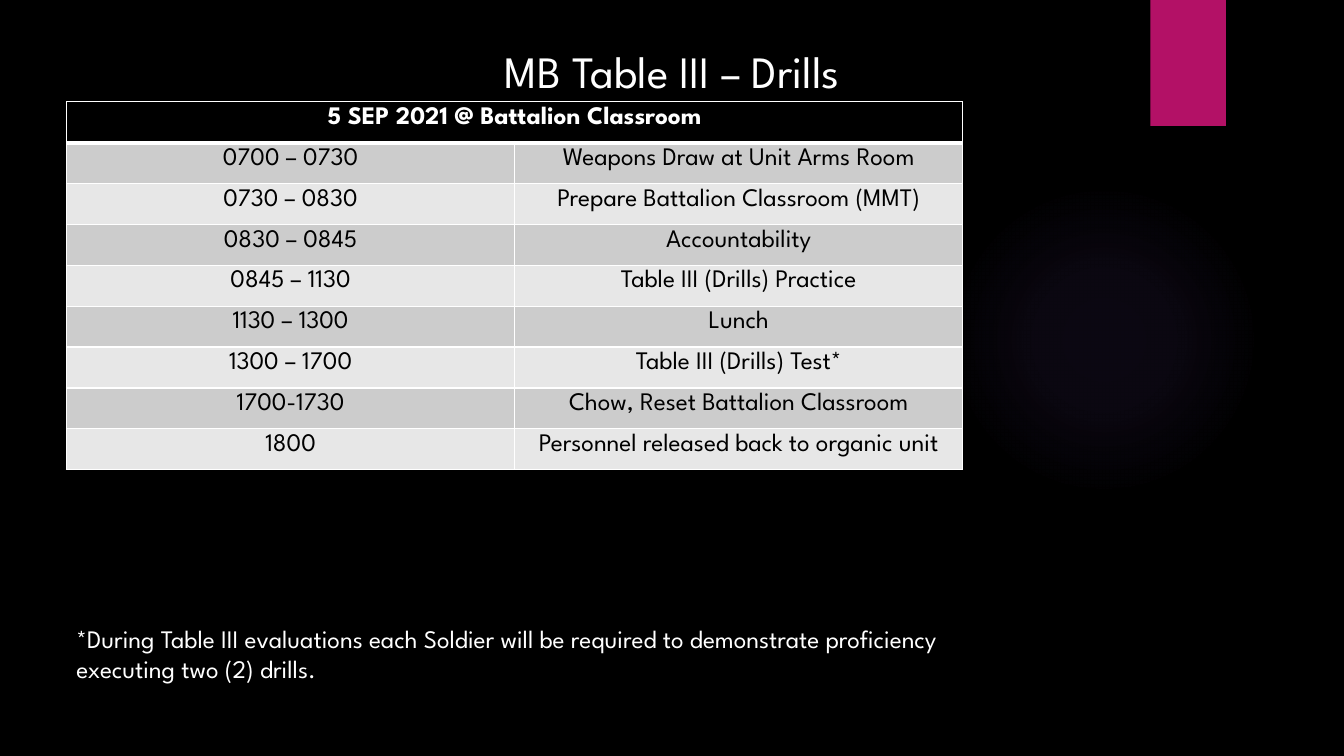
from dataclasses import dataclass

from lxml.etree import SubElement
from pptx import Presentation
from pptx.dml.color import RGBColor
from pptx.enum.shapes import MSO_SHAPE
from pptx.enum.text import MSO_AUTO_SIZE, PP_ALIGN
from pptx.oxml import parse_xml
from pptx.oxml.ns import nsdecls, qn
from pptx.util import Inches, Pt

BLACK = RGBColor(0x00, 0x00, 0x00)
WHITE = RGBColor(0xFF, 0xFF, 0xFF)
PINK = RGBColor(0xB3, 0x11, 0x66)
VIOLET = RGBColor(0x9B, 0x6B, 0xF2)
DARK = RGBColor(0xCC, 0xCC, 0xCC)
LIGHT = RGBColor(0xE7, 0xE7, 0xE7)

BASE = {"name": "League Spartan", "size": Pt(18), "bold": False}
HEAD = BASE | {"bold": True}
TITLE = BASE | {"size": Pt(32)}
INSET = {"margin_top": Inches(0.05), "margin_bottom": Inches(0.05)}


@dataclass
class Box:
    left: float
    top: float
    width: float
    height: float

    def place(self) -> list:
        return [Inches(n) for n in (self.left, self.top, self.width, self.height)]


@dataclass
class Label:
    text: str
    box: Box
    style: dict
    align: PP_ALIGN
    wrap: bool


@dataclass
class Event:
    time: str
    task: str


LABELS = [
    Label("MB Table III – Drills", Box(4.83, 0.38, 3.68, 0.64),
          TITLE, PP_ALIGN.CENTER, False),
    Label("*During Table III evaluations each Soldier will be required to "
          "demonstrate proficiency executing two (2) drills.",
          Box(0.66, 6.13, 8.89, 0.71), BASE, PP_ALIGN.LEFT, True),
]
DAY = "5 SEP 2021 @ Battalion Classroom"
EVENTS = [
    Event("0700 – 0730", "Weapons Draw at Unit Arms Room"),
    Event("0730 – 0830", "Prepare Battalion Classroom (MMT)"),
    Event("0830 – 0845", "Accountability"),
    Event("0845 – 1130", "Table III (Drills) Practice"),
    Event("1130 – 1300", "Lunch"),
    Event("1300 – 1700", "Table III (Drills) Test*"),
    Event("1700-1730", "Chow, Reset Battalion Classroom"),
    Event("1800", "Personnel released back to organic unit"),
]
GRID = Box(0.66, 1.01, 8.89, 3.65)


def apply(target, values: dict) -> None:
    for key, value in values.items():
        setattr(target, key, value)


def write(frame, text: str, style: dict, color: RGBColor, align: PP_ALIGN) -> None:
    para = frame.paragraphs[0]
    para.alignment = align
    run = para.add_run()
    run.text = text
    apply(run.font, style)
    run.font.color.rgb = color


def add_form(slide, kind: MSO_SHAPE, box: Box, color: RGBColor):
    shape = slide.shapes.add_shape(kind, *box.place())
    shape.shadow.inherit = False
    shape.fill.solid()
    shape.fill.fore_color.rgb = color
    shape.line.fill.background()
    return shape


def add_glow(slide, box: Box) -> None:
    shape = add_form(slide, MSO_SHAPE.OVAL, box, VIOLET)
    stops = "".join(
        f'<a:gs pos="{pos * 1000}"><a:srgbClr val="{VIOLET}">'
        f'<a:alpha val="{alpha * 1000}"/></a:srgbClr></a:gs>'
        for pos, alpha in [(0, 7), (36, 6), (69, 0), (100, 0)])
    grad = parse_xml(
        f'<a:gradFill {nsdecls("a")}><a:gsLst>{stops}</a:gsLst>'
        '<a:path path="circle"><a:fillToRect l="50000" t="50000" '
        'r="50000" b="50000"/></a:path></a:gradFill>')
    props = shape.fill._xPr
    props.replace(props.find(qn("a:solidFill")), grad)


def add_label(slide, label: Label) -> None:
    frame = slide.shapes.add_textbox(*label.box.place()).text_frame
    apply(frame, {"word_wrap": label.wrap,
                  "auto_size": MSO_AUTO_SIZE.SHAPE_TO_FIT_TEXT})
    write(frame, label.text, label.style, WHITE, label.align)


def paint(cell, fill: RGBColor, base: int = 1, top: int = 1) -> None:
    props = cell._tc.get_or_add_tcPr()
    for side, width in {"L": 1, "R": 1, "T": top, "B": base}.items():
        line = SubElement(props, qn(f"a:ln{side}"), w=str(Pt(width)))
        solid = SubElement(line, qn("a:solidFill"))
        SubElement(solid, qn("a:srgbClr"), val=str(WHITE))
    cell.fill.solid()
    cell.fill.fore_color.rgb = fill
    apply(cell, INSET)


def add_plan(slide, box: Box) -> None:
    count = len(EVENTS) + 1
    table = slide.shapes.add_table(count, 2, *box.place()).table
    for col in table.columns:
        col.width = Inches(box.width / 2)
    for row in table.rows:
        row.height = Inches(box.height / count)

    # Heading across both columns
    first, last = table.cell(0, 0), table.cell(0, 1)
    first.merge(last)
    for cell in (first, last):
        paint(cell, BLACK, base=3)
    write(first.text_frame, DAY, HEAD, WHITE, PP_ALIGN.CENTER)

    # Banded rows of times and tasks
    for row, event in enumerate(EVENTS, 1):
        for col, text in enumerate((event.time, event.task)):
            cell = table.cell(row, col)
            paint(cell, DARK if row % 2 else LIGHT, top=3 if row == 1 else 1)
            write(cell.text_frame, text, BASE, BLACK, PP_ALIGN.CENTER)


def main() -> None:
    deck = Presentation()
    apply(deck, {"slide_width": Inches(13.33), "slide_height": Inches(7.5)})
    slide = deck.slides.add_slide(deck.slide_layouts[6])

    # Backdrop
    slide.background.fill.solid()
    slide.background.fill.fore_color.rgb = BLACK
    add_glow(slide, Box(9.41, 1.83, 3.08, 3.08))
    add_form(slide, MSO_SHAPE.RECTANGLE, Box(11.41, 0, 0.75, 1.25), PINK)

    # Title, schedule and footnote
    add_plan(slide, GRID)
    for label in LABELS:
        add_label(slide, label)
    deck.save("out.pptx")


if __name__ == "__main__":
    main()
